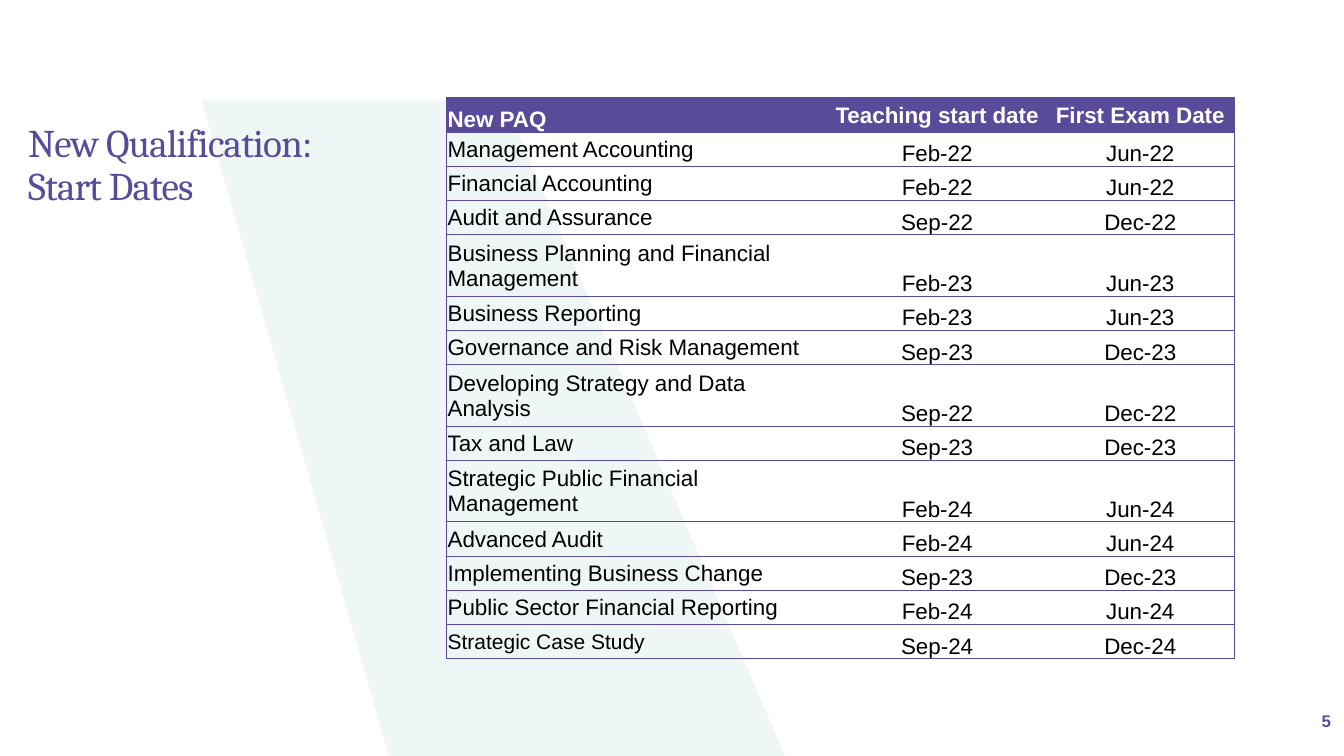
from typing import NamedTuple

from lxml import etree
from pptx import Presentation
from pptx.dml.color import RGBColor
from pptx.enum import text
from pptx.oxml import ns
from pptx.util import Inches, Pt

PURPLE, MINT, WHITE, BLACK = "5A4B9A", "EEF7F5", "FFFFFF", "000000"
LEFT, CENTER, RIGHT = text.PP_ALIGN.LEFT, text.PP_ALIGN.CENTER, text.PP_ALIGN.RIGHT
TOP, MIDDLE, BOTTOM = text.MSO_ANCHOR.TOP, text.MSO_ANCHOR.MIDDLE, text.MSO_ANCHOR.BOTTOM
COLUMN_WIDTHS = (3.78, 2.17, 1.86)
ROW_HEIGHT, TALL_ROW_HEIGHT = 0.34, 0.61


class Module(NamedTuple):
    name: str
    teaching: str
    exam: str
    height: float = ROW_HEIGHT
    name_size: float = 16


HEADER = Module("New PAQ", "Teaching start date", "First Exam Date")
MODULES = [
    Module("Management Accounting", "Feb-22", "Jun-22"),
    Module("Financial Accounting", "Feb-22", "Jun-22"),
    Module("Audit and Assurance", "Sep-22", "Dec-22"),
    Module("Business Planning and Financial Management", "Feb-23", "Jun-23", TALL_ROW_HEIGHT),
    Module("Business Reporting", "Feb-23", "Jun-23"),
    Module("Governance and Risk Management", "Sep-23", "Dec-23"),
    Module("Developing Strategy and Data Analysis", "Sep-22", "Dec-22", TALL_ROW_HEIGHT),
    Module("Tax and Law", "Sep-23", "Dec-23"),
    Module("Strategic Public Financial Management", "Feb-24", "Jun-24", TALL_ROW_HEIGHT),
    Module("Advanced Audit", "Feb-24", "Jun-24"),
    Module("Implementing Business Change", "Sep-23", "Dec-23"),
    Module("Public Sector Financial Reporting", "Feb-24", "Jun-24"),
    Module("Strategic Case Study", "Sep-24", "Dec-24", name_size=15),
]


def rgb(color: str) -> RGBColor:
    return RGBColor.from_string(color)


def format_paragraph(p, size: float, color: str, bold: bool = False,
                     align=LEFT, font: str = "Arial") -> None:
    p.alignment = align
    p.font.name, p.font.size, p.font.bold = font, Pt(size), bold
    p.font.color.rgb = rgb(color)


def set_borders(cell, visible_sides: str) -> None:
    """Draw the sides named by letters (L, R, T, B) and hide the others."""
    tc_pr = cell._tc.get_or_add_tcPr()
    for i, side in enumerate("LRTB"):
        line = etree.Element(ns.qn(f"a:ln{side}"), w=str(Pt(0.75)))
        if side in visible_sides:
            fill = etree.SubElement(line, ns.qn("a:solidFill"))
            etree.SubElement(fill, ns.qn("a:srgbClr"), val=PURPLE)
        else:
            etree.SubElement(line, ns.qn("a:noFill"))
        tc_pr.insert(i, line)


def add_band(s) -> None:
    builder = s.shapes.build_freeform(5.28, 1, scale=Inches(1))
    builder.add_line_segments([(1.81, 1), (4.32, 7.5), (7.79, 7.5)], close=True)
    band = builder.convert_to_shape()
    band.shadow.inherit = False
    band.fill.solid()
    band.fill.fore_color.rgb = rgb(MINT)
    band.line.fill.background()
    s.shapes._spTree.insert(2, band._element)


def add_title(s) -> None:
    title = s.shapes.title
    title.left, title.top = Inches(0.28), Inches(1.23)
    title.width, title.height = Inches(3.22), Inches(5.03)
    tf = title.text_frame
    tf.text = "New Qualification: Start Dates"
    tf.word_wrap, tf.auto_size = True, text.MSO_AUTO_SIZE.NONE
    tf.vertical_anchor = TOP
    tf.margin_left = tf.margin_right = tf.margin_top = tf.margin_bottom = 0
    p = tf.paragraphs[0]
    p.line_spacing = 0.9
    format_paragraph(p, 28, PURPLE, font="Cambria")
    p.runs[0]._r.get_or_add_rPr().set("spc", "-60")


def add_page_number(s) -> None:
    box = s.shapes.add_textbox(Inches(11.63), Inches(6.95), Inches(1.67), Inches(0.4))
    tf = box.text_frame
    tf.word_wrap, tf.vertical_anchor = True, MIDDLE
    tf.text = "5"
    format_paragraph(tf.paragraphs[0], 12, PURPLE, bold=True, align=RIGHT)


def add_dates_table(s) -> None:
    rows = [HEADER, *MODULES]
    frame = s.shapes.add_table(
        len(rows), len(COLUMN_WIDTHS), Inches(4.43), Inches(0.97),
        Inches(sum(COLUMN_WIDTHS)), Inches(sum(row.height for row in rows)))
    table = frame.table
    table.first_row = table.horz_banding = False
    for column, width in zip(table.columns, COLUMN_WIDTHS):
        column.width = Inches(width)
    for i, row in enumerate(rows):
        table.rows[i].height = Inches(row.height)
        is_header = i == 0
        for j, value in enumerate((row.name, row.teaching, row.exam)):
            cell = table.cell(i, j)
            cell.text = value
            cell.margin_left = cell.margin_right = cell.margin_top = Inches(0.01)
            cell.margin_bottom = 0
            # Names and dates swap anchors in the header row
            cell.vertical_anchor = BOTTOM if is_header == (j == 0) else MIDDLE
            if is_header:
                cell.fill.solid()
                cell.fill.fore_color.rgb = rgb(PURPLE)
            else:
                cell.fill.background()
            set_borders(cell, ("LTB", "TB", "RTB")[j])
            format_paragraph(cell.text_frame.paragraphs[0],
                             row.name_size if j == 0 else 16,
                             WHITE if is_header else BLACK, bold=is_header,
                             align=LEFT if j == 0 else CENTER)


def main() -> None:
    prs = Presentation()
    prs.slide_width, prs.slide_height = Inches(13.33), Inches(7.5)
    s = prs.slides.add_slide(prs.slide_layouts[5])
    add_band(s)
    add_title(s)
    add_page_number(s)
    add_dates_table(s)
    prs.save("out.pptx")


if __name__ == "__main__":
    main()
